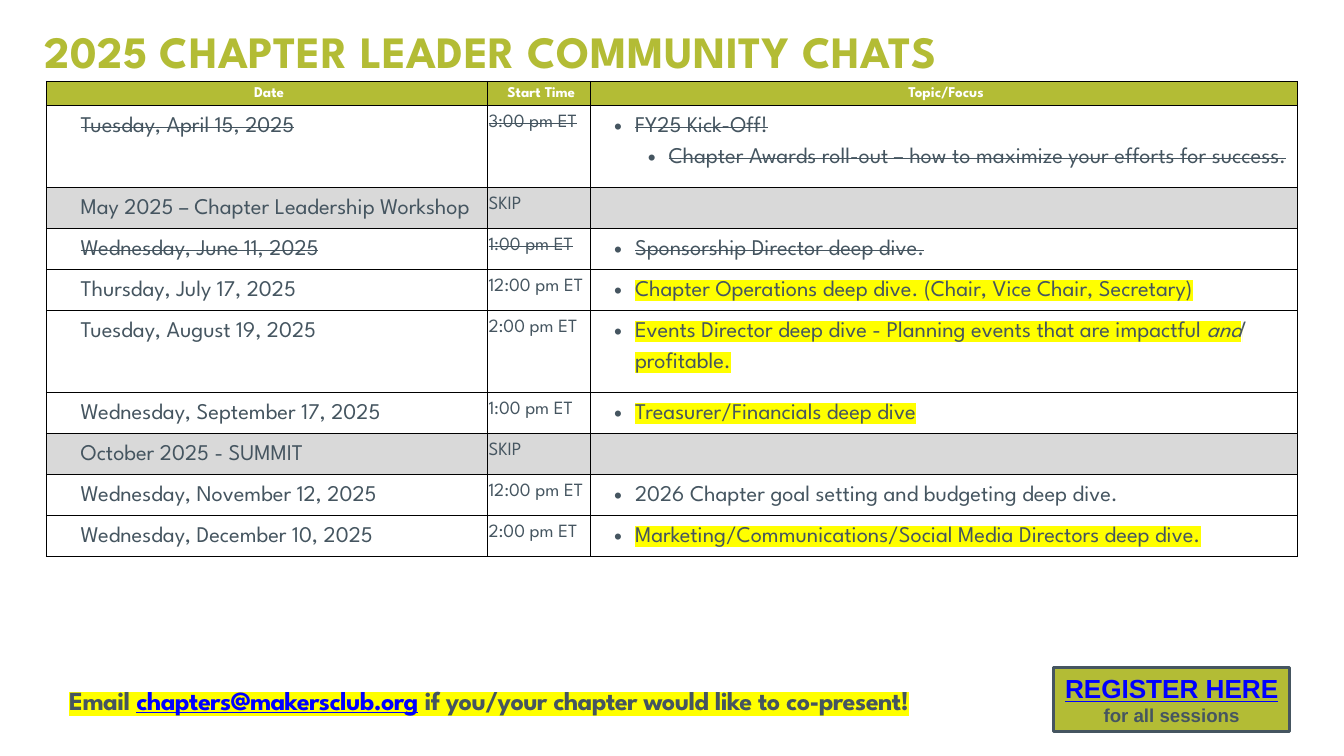
from lxml import etree
from pptx import Presentation
from pptx import util as u
from pptx.dml.color import RGBColor
from pptx.enum import shapes, text
from pptx.oxml.ns import qn

Inches, Pt = u.Inches, u.Pt
COLORS = {"green": "B3BC35", "slate": "455560", "yellow": "FFFF00", "link": "0000FF",
          "grey": "D9D9D9", "white": "FFFFFF", "black": "000000"}
FONT = "League Spartan"
COLUMN_WIDTHS = [6.57, 1.53, 10.52]
HEADER_HEIGHT, LINE_HEIGHT = 0.36, 0.61
HEADERS = [" Date", " Start Time", " Topic/Focus"]
DONE, SKIPPED, OPEN, PLAIN = "done", "skipped", "open", "plain"

# Date, start time, status, topics; a topic is a list of runs, the odd ones in italics
SESSIONS = [
    ("Tuesday, April 15, 2025", "3:00 pm ET", DONE,
     [["FY25 Kick-Off!"],
      ["Chapter Awards roll-out – how to maximize your efforts for success."]]),
    ("May 2025 – Chapter Leadership Workshop", "SKIP", SKIPPED, []),
    ("Wednesday, June 11, 2025", "1:00 pm ET", DONE, [["Sponsorship Director deep dive."]]),
    ("Thursday, July 17, 2025", "12:00 pm ET", OPEN,
     [["Chapter Operations deep dive. (Chair, Vice Chair, Secretary)"]]),
    ("Tuesday, August 19, 2025", "2:00 pm ET", OPEN,
     [["Events Director deep dive - Planning events that are impactful ", "and",
       " profitable."]]),
    ("Wednesday, September 17, 2025", "1:00 pm ET", OPEN, [["Treasurer/Financials deep dive"]]),
    ("October 2025 - SUMMIT", "SKIP", SKIPPED, []),
    ("Wednesday, November 12, 2025", "12:00 pm ET", PLAIN,
     [["2026 Chapter goal setting and budgeting deep dive."]]),
    ("Wednesday, December 10, 2025", "2:00 pm ET", OPEN,
     [["Marketing/Communications/Social Media Directors deep dive."]]),
]
TWO_LINE_ROWS = {1, 5}


def rgb(name):
    return RGBColor.from_string(COLORS[name])


def add_color(parent, name):
    etree.SubElement(parent, qn("a:srgbClr")).set("val", COLORS[name])


def add_run(paragraph, words, size=24, color="slate", font=FONT, bold=False, italic=False,
            underline=False, strike=False, highlight=None, spacing=None):
    run = paragraph.add_run()
    run.text = words
    run.font.size, run.font.name = Pt(size), font
    run.font.bold, run.font.italic, run.font.underline = bold, italic, underline
    run.font.color.rgb = rgb(color)
    properties = run.font._element
    if strike:
        properties.set("strike", "sngStrike")
    if spacing is not None:
        properties.set("spc", str(round(spacing * 100)))
    if highlight:
        mark = etree.Element(qn("a:highlight"))
        add_color(mark, highlight)
        properties.find(qn("a:solidFill")).addnext(mark)


def format_paragraph(paragraph, level=0, left=0, hanging=0, bullet=False):
    paragraph.level = level
    paragraph.line_spacing = 1.5
    properties = paragraph._p.get_or_add_pPr()
    properties.set("marL", str(Inches(left)))
    properties.set("indent", str(Inches(-hanging)))
    if bullet:
        etree.SubElement(properties, qn("a:buFont")).set("typeface", "Arial")
        etree.SubElement(properties, qn("a:buChar")).set("char", "•")


def set_margins(target, left, top, right, bottom):
    target.margin_left, target.margin_top = Inches(left), Inches(top)
    target.margin_right, target.margin_bottom = Inches(right), Inches(bottom)


def add_text_box(slide, left, top, width, height):
    frame = slide.shapes.add_textbox(*map(Inches, (left, top, width, height))).text_frame
    frame.word_wrap = True
    return frame


def style_cell(cell, fill=None):
    set_margins(cell, 0.01, 0.01, 0.01, 0)
    if fill:
        cell.fill.solid()
        cell.fill.fore_color.rgb = rgb(fill)
    else:
        cell.fill.background()
    properties = cell._tc.get_or_add_tcPr()
    for position, side in enumerate(("lnL", "lnR", "lnT", "lnB")):
        border = etree.Element(qn(f"a:{side}"), w=str(Pt(1)))
        add_color(etree.SubElement(border, qn("a:solidFill")), "black")
        properties.insert(position, border)


def fill_topics(cell, topics, **style):
    for index, runs in enumerate(topics):
        frame = cell.text_frame
        paragraph = frame.add_paragraph() if index else frame.paragraphs[0]
        format_paragraph(paragraph, level=index + 1, left=0.65 + 0.5 * index,
                         hanging=0.31, bullet=True)
        for position, words in enumerate(runs):
            add_run(paragraph, words, italic=position % 2 == 1, **style)


def add_schedule(slide):
    heights = [HEADER_HEIGHT] + [LINE_HEIGHT * (2 if row in TWO_LINE_ROWS else 1)
                                 for row in range(1, len(SESSIONS) + 1)]
    table = slide.shapes.add_table(len(heights), len(COLUMN_WIDTHS), Inches(0.69), Inches(1.21),
                                   Inches(sum(COLUMN_WIDTHS)), Inches(sum(heights))).table
    table.first_row = table.horz_banding = False
    for column, width in zip(table.columns, COLUMN_WIDTHS):
        column.width = Inches(width)
    for row, height in zip(table.rows, heights):
        row.height = Inches(height)

    for cell, header in zip(table.rows[0].cells, HEADERS):
        style_cell(cell, "green")
        cell.vertical_anchor = text.MSO_ANCHOR.MIDDLE
        paragraph = cell.text_frame.paragraphs[0]
        paragraph.alignment = text.PP_ALIGN.CENTER
        add_run(paragraph, header, size=16, color="white", bold=True)

    for row, (date, time, status, topics) in enumerate(SESSIONS, start=1):
        cells = [table.cell(row, column) for column in range(len(COLUMN_WIDTHS))]
        for cell in cells:
            style_cell(cell, "grey" if status == SKIPPED else None)
        strike = status == DONE
        date_paragraph, time_paragraph = (cell.text_frame.paragraphs[0] for cell in cells[:2])
        format_paragraph(date_paragraph, level=1, left=0.5)
        add_run(date_paragraph, date, strike=strike)
        format_paragraph(time_paragraph)
        add_run(time_paragraph, time, size=20, strike=strike)
        fill_topics(cells[2], topics, strike=strike,
                    highlight="yellow" if status == OPEN else None)


def add_title(slide):
    frame = add_text_box(slide, 0.56, 0.3, 17.02, 0.91)
    add_run(frame.paragraphs[0], "2025 CHAPTER LEADER COMMUNITY CHATS", size=48,
            color="green", bold=True, spacing=0.5)


def add_invitation(slide):
    frame = add_text_box(slide, 0.69, 9.93, 13.15, 0.66)
    set_margins(frame, 0, 0.02, 0, 0)
    paragraph = frame.paragraphs[0]
    format_paragraph(paragraph, left=0.02)
    paragraph.alignment = text.PP_ALIGN.CENTER
    paragraph.space_before = Pt(1.5)
    style = dict(size=28, bold=True, spacing=-0.6, highlight="yellow")
    add_run(paragraph, "Email ", **style)
    add_run(paragraph, "chapters@makersclub.org", color="link", underline=True, **style)
    add_run(paragraph, " if you/your chapter would like to co-present!", **style)


def add_register_button(slide):
    button = slide.shapes.add_shape(shapes.MSO_SHAPE.RECTANGLE, Inches(15.68), Inches(9.93),
                                    Inches(3.51), Inches(0.96))
    button.shadow.inherit = False
    button.fill.solid()
    button.fill.fore_color.rgb = rgb("green")
    button.line.color.rgb = rgb("slate")
    button.line.width = Pt(3)
    frame = button.text_frame
    frame.word_wrap = False
    frame.vertical_anchor = text.MSO_ANCHOR.MIDDLE
    set_margins(frame, 0.15, 0.07, 0.15, 0.07)
    first, second = frame.paragraphs[0], frame.add_paragraph()
    first.alignment = second.alignment = text.PP_ALIGN.CENTER
    add_run(first, "REGISTER HERE", size=28, color="link", font="Arial", bold=True,
            underline=True)
    add_run(second, "for all sessions", size=20, font="Arial", bold=True)


def main():
    presentation = Presentation()
    presentation.slide_width, presentation.slide_height = Inches(20), Inches(11.25)
    slide = presentation.slides.add_slide(presentation.slide_layouts[6])
    add_invitation(slide)
    add_register_button(slide)
    add_title(slide)
    add_schedule(slide)
    presentation.save("out.pptx")


if __name__ == "__main__":
    main()
